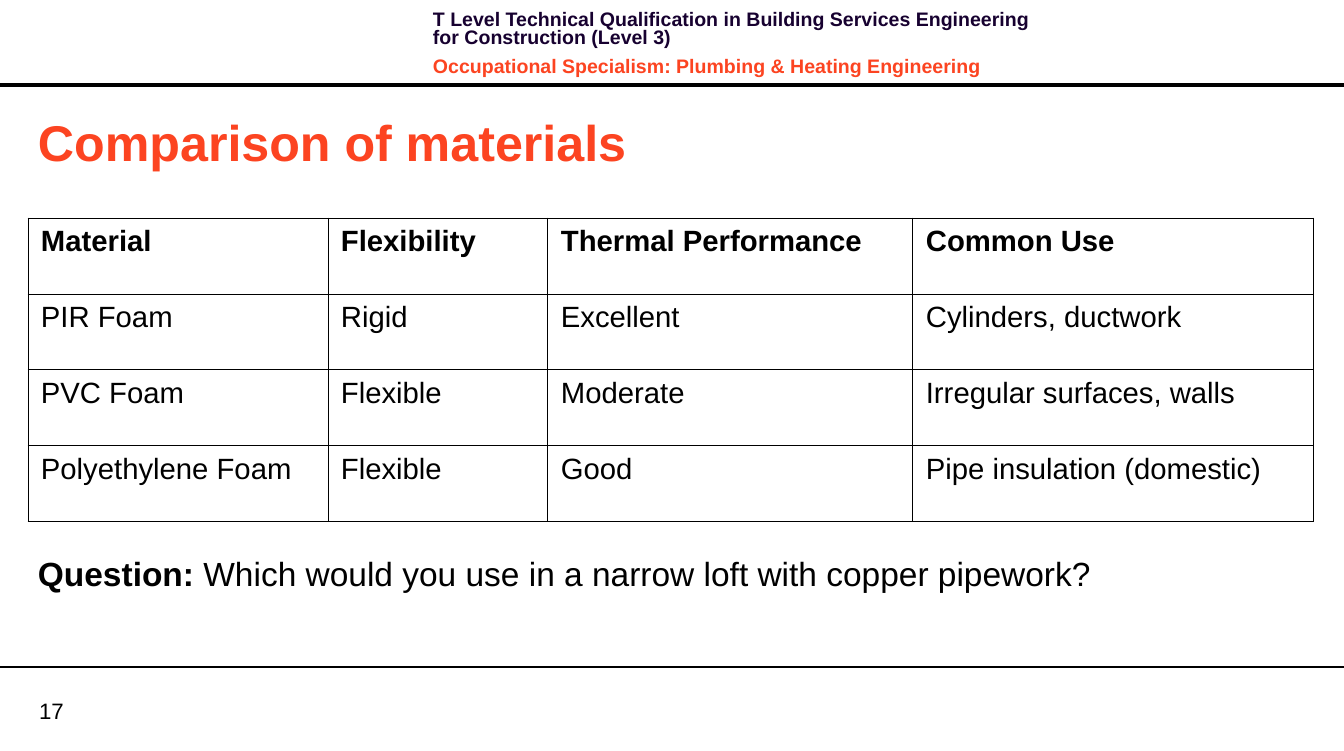
import lxml.etree
import pptx
import pptx.dml.color
import pptx.enum.shapes
import pptx.enum.text
import pptx.oxml.ns
import pptx.util

PX = 914400 / 100.4
COLORS = {"ink": "000000", "navy": "170130", "accent": "FC4421", "paper": "FFFFFF"}
WIDTH, HEIGHT = 1344, 751


def px(length):
    return pptx.util.Emu(round(length * PX))


def rgb(name):
    return pptx.dml.color.RGBColor.from_string(COLORS[name])


class SlideBuilder:
    font = "Arial"
    hairline = 0.75

    def __init__(self, slide):
        self.slide = slide
        fill = slide.background.fill
        fill.solid()
        fill.fore_color.rgb = rgb("paper")

    def runs(self, paragraph, pieces, size, color):
        for text, bold in pieces:
            run = paragraph.add_run()
            run.text = text
            run.font.name = self.font
            run.font.size = pptx.util.Pt(size)
            run.font.bold = bold
            run.font.color.rgb = rgb(color)

    def text(self, box, size, paragraphs, insets=(10, 5), middle=False,
             line_spacing=None, before=0, after=0):
        shape = self.slide.shapes.add_textbox(*map(px, box))
        frame = shape.text_frame
        frame.word_wrap = True
        anchor = pptx.enum.text.MSO_ANCHOR
        frame.vertical_anchor = anchor.MIDDLE if middle else anchor.TOP
        frame.margin_left = frame.margin_right = px(insets[0])
        frame.margin_top = frame.margin_bottom = px(insets[1])
        for index, (color, pieces) in enumerate(paragraphs):
            paragraph = frame.add_paragraph() if index else frame.paragraphs[0]
            paragraph.line_spacing = line_spacing
            paragraph.space_before = pptx.util.Pt(before if index else 0)
            paragraph.space_after = pptx.util.Pt(after)
            self.runs(paragraph, pieces, size, color)

    def line(self, start, end, color):
        connector = self.slide.shapes.add_connector(
            pptx.enum.shapes.MSO_CONNECTOR.STRAIGHT, *map(px, start + end))
        connector.line.color.rgb = rgb(color)
        connector.line.width = pptx.util.Pt(self.hairline)
        properties = connector._element.spPr
        lxml.etree.SubElement(properties, pptx.oxml.ns.qn("a:effectLst"))

    def bar(self, box, color):
        shape = self.slide.shapes.add_shape(
            pptx.enum.shapes.MSO_SHAPE.RECTANGLE, *map(px, box))
        shape.shadow.inherit = False
        shape.fill.solid()
        shape.fill.fore_color.rgb = rgb(color)
        shape.line.fill.background()

    def borders(self, cell, color):
        qn = pptx.oxml.ns.qn
        properties = cell._tc.get_or_add_tcPr()
        for side in ("lnL", "lnR", "lnT", "lnB"):
            border = lxml.etree.SubElement(properties, qn("a:" + side))
            border.set("w", str(pptx.util.Pt(self.hairline)))
            fill = lxml.etree.SubElement(border, qn("a:solidFill"))
            lxml.etree.SubElement(fill, qn("a:srgbClr")).set("val", COLORS[color])

    def table(self, left, top, widths, row_height, rows, size, color):
        table = self.slide.shapes.add_table(
            len(rows), len(widths), px(left), px(top),
            px(sum(widths)), px(row_height * len(rows))).table
        table.first_row = table.horz_banding = False
        for column, width in zip(table.columns, widths):
            column.width = px(width)
        for row_index, values in enumerate(rows):
            table.rows[row_index].height = px(row_height)
            for column_index, value in enumerate(values):
                cell = table.cell(row_index, column_index)
                cell.margin_left = cell.margin_right = px(13)
                cell.margin_top = cell.margin_bottom = px(7)
                self.borders(cell, color)
                cell.fill.background()
                paragraph = cell.text_frame.paragraphs[0]
                self.runs(paragraph, [(value, row_index == 0)], size, color)


def main():
    presentation = pptx.Presentation()
    presentation.slide_width = px(WIDTH)
    presentation.slide_height = px(HEIGHT)
    builder = SlideBuilder(presentation.slides.add_slide(presentation.slide_layouts[6]))

    builder.text((39, 697, 64, 27), 16, [("ink", [("17", False)])],
                 insets=(0, 0), middle=True)
    builder.line((0, 667), (WIDTH, 667), "ink")
    builder.text((423, 7, 640, 64), 14, [
        ("navy", [("T Level Technical Qualification in Building Services Engineering "
                   "for Construction (Level 3)", True)]),
        ("accent", [("Occupational Specialism: Plumbing & Heating Engineering", True)]),
    ], line_spacing=pptx.util.Pt(13.1), before=4, after=4)
    builder.bar((0, 83, WIDTH, 4), "ink")
    builder.text((28, 106, 1277, 71), 36,
                 [("accent", [("Comparison of materials", True)])], middle=True)
    builder.table(28, 218, [300, 220, 365, 401], 76, [
        ["Material", "Flexibility", "Thermal Performance", "Common Use"],
        ["PIR Foam", "Rigid", "Excellent", "Cylinders, ductwork"],
        ["PVC Foam", "Flexible", "Moderate", "Irregular surfaces, walls"],
        ["Polyethylene Foam", "Flexible", "Good", "Pipe insulation (domestic)"],
    ], 21, "ink")
    builder.text((28, 539, 1286, 81), 24, [("ink", [
        ("Question: ", True),
        ("Which would you use in a narrow loft with copper pipework?", False),
    ])], insets=(10, 10), line_spacing=1.1, after=12)
    presentation.save("out.pptx")


if __name__ == "__main__":
    main()
